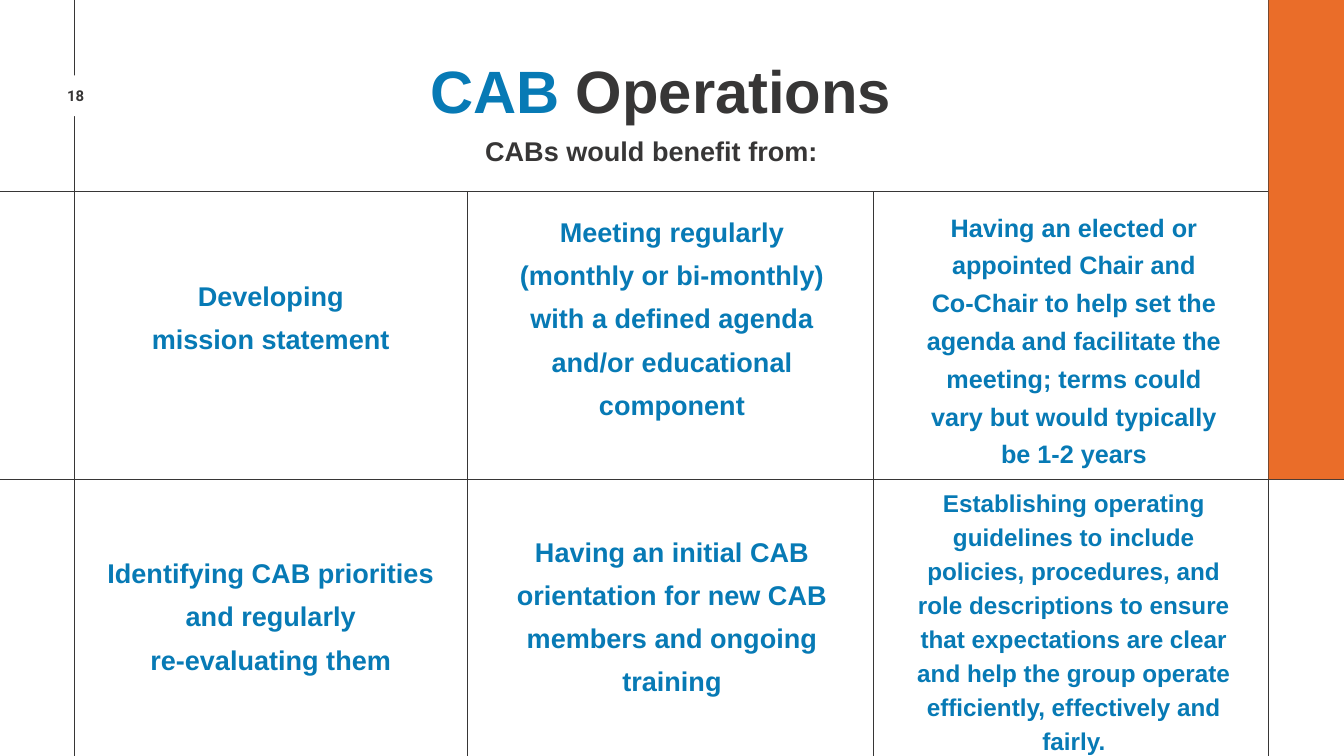
"""Build the CAB Operations slide: a ruled two-by-three grid of recommendations."""
from dataclasses import dataclass

import pptx
import pptx.dml.color
import pptx.enum.shapes
import pptx.enum.text
import pptx.util
from lxml import etree

Inches, Pt = pptx.util.Inches, pptx.util.Pt
ALIGN = pptx.enum.text.PP_ALIGN
RECTANGLE = pptx.enum.shapes.MSO_SHAPE.RECTANGLE
STRAIGHT = pptx.enum.shapes.MSO_CONNECTOR.STRAIGHT


@dataclass(frozen=True)
class Theme:
    blue: str = "077AB5"
    dark: str = "373636"
    orange: str = "EA6D29"
    white: str = "FFFFFF"
    font: str = "Arial"
    number_font: str = "Roboto"
    title_size: int = 64
    body_size: int = 29
    number_size: int = 16
    rule_width: float = 0.75


THEME = Theme()
WIDTH, HEIGHT = 20, 11.25
COLUMN_EDGES = (1.11, 6.96, 13, 18.88)
ROW_EDGES = (2.85, 7.13)
COLUMN_CENTRES = (4.03, 10, 15.98)

TITLE = (("CAB ", THEME.blue), ("Operations", THEME.dark))
SUBTITLE = "CABs would benefit from:"
PAGE_NUMBER = "18"

# Each cell: paragraphs, offset below the row rule, width, height, size, leading.
CELLS = (
    (
        (("Developing mission statement",), 1.14, 3.66, 1.88, THEME.body_size, 46.4),
        (("Meeting regularly (monthly or bi-monthly) with a defined agenda "
          "and/or educational component",), 0.19, 4.61, 3.79, THEME.body_size, 46.4),
        (("Having an elected or appointed Chair and",
          "Co-Chair to help set the agenda and facilitate the meeting; "
          "terms could vary but would typically be 1-2 years"),
         0.19, 4.58, 3.84, 27, 40.5),
    ),
    (
        (("Identifying CAB priorities and regularly", "re-evaluating them"),
         0.99, 5.14, 1.88, THEME.body_size, 46.4),
        (("Having an initial CAB orientation for new CAB members and ongoing training",),
         0.67, 5.12, 2.52, THEME.body_size, 46.4),
        (("Establishing operating guidelines to include policies, procedures, and "
          "role descriptions to ensure that expectations are clear and help the "
          "group operate efficiently, effectively and fairly.",),
         0.06, 4.83, 3.98, 26, 36.4),
    ),
)


def rgb(value):
    return pptx.dml.color.RGBColor.from_string(value)


def add_rule(slide, x1, y1, x2, y2):
    rule = slide.shapes.add_connector(STRAIGHT, *map(Inches, (x1, y1, x2, y2)))
    rule.line.color.rgb = rgb(THEME.dark)
    rule.line.width = Pt(THEME.rule_width)
    properties = rule._element.spPr
    etree.SubElement(properties, pptx.oxml.ns.qn("a:effectLst"))


def add_block(slide, box, color):
    block = slide.shapes.add_shape(RECTANGLE, *map(Inches, box))
    block.shadow.inherit = False
    block.fill.solid()
    block.fill.fore_color.rgb = rgb(color)
    block.line.fill.background()


def prepare_frame(shape):
    frame = shape.text_frame
    frame.margin_left = frame.margin_right = frame.margin_top = frame.margin_bottom = 0
    frame.word_wrap = True
    frame.auto_size = pptx.enum.text.MSO_AUTO_SIZE.NONE
    frame.vertical_anchor = pptx.enum.text.MSO_ANCHOR.TOP
    return frame


def style(paragraph, size, leading, align, font=THEME.font):
    paragraph.alignment = align
    paragraph.line_spacing = Pt(leading)
    paragraph.font.size = Pt(size)
    paragraph.font.name = font
    paragraph.font.bold = True


def add_text(slide, box, lines, size, leading, color, align=ALIGN.CENTER, font=THEME.font):
    frame = prepare_frame(slide.shapes.add_textbox(*map(Inches, box)))
    frame.text = "\n".join(lines)
    for paragraph in frame.paragraphs:
        style(paragraph, size, leading, align, font)
        paragraph.font.color.rgb = rgb(color)


def set_title(slide):
    title = slide.shapes.title
    title.left, title.top, title.width, title.height = map(Inches, (6.4, 0.89, 7.33, 1))
    paragraph = prepare_frame(title).paragraphs[0]
    for words, color in TITLE:
        run = paragraph.add_run()
        run.text = words
        run.font.color.rgb = rgb(color)
    style(paragraph, THEME.title_size, 70.4, ALIGN.LEFT)


def main():
    deck = pptx.Presentation()
    deck.slide_width, deck.slide_height = Inches(WIDTH), Inches(HEIGHT)
    slide = deck.slides.add_slide(deck.slide_layouts[5])
    first, *inner, last = COLUMN_EDGES

    for x in (first, last):
        add_rule(slide, x, 0, x, HEIGHT)
    for x in inner:
        add_rule(slide, x, ROW_EDGES[0], x, HEIGHT)
    for y in ROW_EDGES:
        add_rule(slide, 0, y, WIDTH, y)
    add_block(slide, (last, 0, WIDTH - last, ROW_EDGES[1]), THEME.orange)
    add_block(slide, (0.69, 1.12, 0.86, 0.61), THEME.white)

    add_text(slide, (0.76, 1.31, 0.73, 0.25), (PAGE_NUMBER,), THEME.number_size, 17.6,
             THEME.dark, font=THEME.number_font)
    set_title(slide)
    add_text(slide, (7.22, 1.84, 5.34, 0.61), (SUBTITLE,), THEME.body_size, 46.4,
             THEME.dark, ALIGN.LEFT)

    for row_top, row in zip(ROW_EDGES, CELLS):
        for centre, (lines, offset, width, height, size, leading) in zip(COLUMN_CENTRES, row):
            box = (centre - width / 2, row_top + offset, width, height)
            add_text(slide, box, lines, size, leading, THEME.blue)

    deck.save("out.pptx")


if __name__ == "__main__":
    main()
